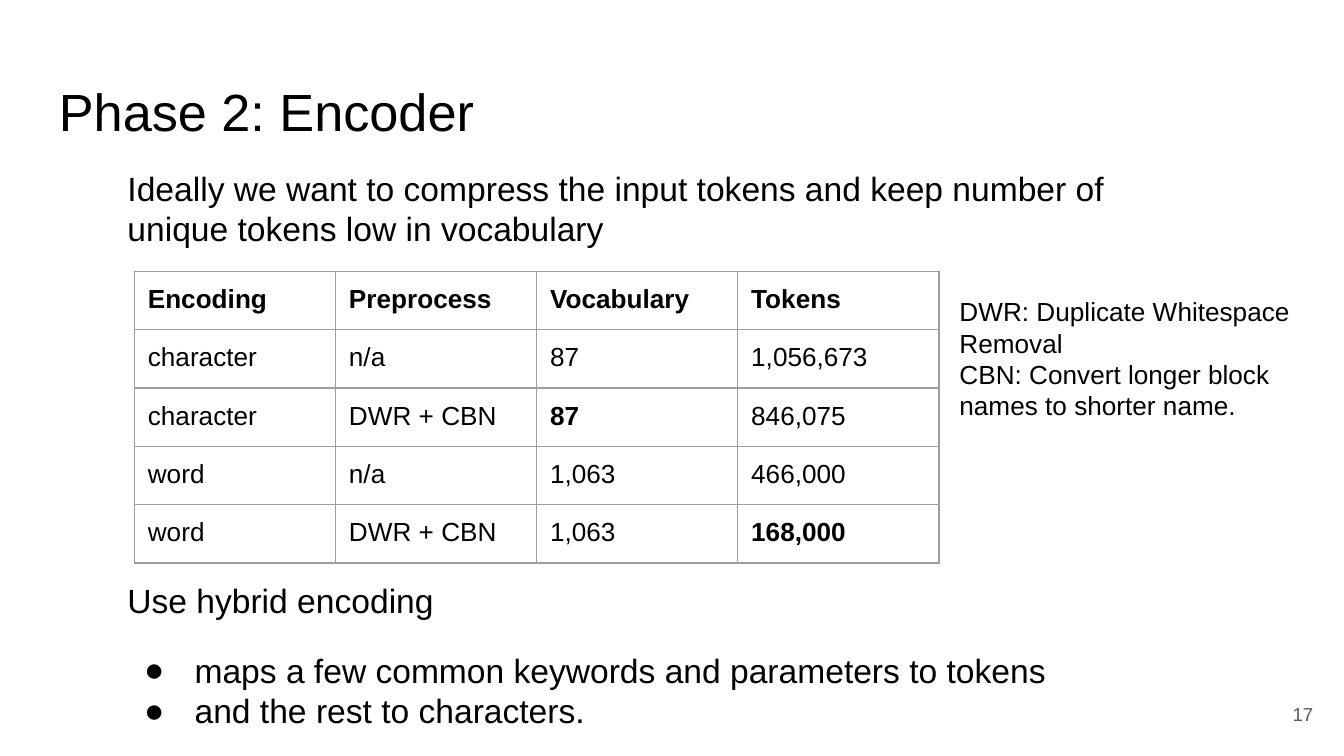
import pptx
import pptx.util
import pptx.dml.color
import pptx.enum.text
import pptx.oxml
import pptx.oxml.ns

Pt = pptx.util.Pt
RGBColor = pptx.dml.color.RGBColor
PP_ALIGN = pptx.enum.text.PP_ALIGN
MSO_ANCHOR = pptx.enum.text.MSO_ANCHOR

BLACK = RGBColor(0x00, 0x00, 0x00)
GRAY = RGBColor(0x59, 0x59, 0x59)
BORDER = RGBColor(0x9E, 0x9E, 0x9E)
FONT = "Arial"
INSET = 7.2

ROWS = [
    ["Encoding", "Preprocess", "Vocabulary", "Tokens"],
    ["character", "n/a", "87", "1,056,673"],
    ["character", "DWR + CBN", "87", "846,075"],
    ["word", "n/a", "1,063", "466,000"],
    ["word", "DWR + CBN", "1,063", "168,000"],
]
BEST_CELLS = {(2, 2), (4, 3)}


def add_run(p, text, size, color=BLACK, bold=False):
    r = p.add_run()
    r.text = text
    r.font.name = FONT
    r.font.size = Pt(size)
    r.font.bold = bold
    r.font.color.rgb = color


def set_margins(target):
    for side in ("left", "top", "right", "bottom"):
        setattr(target, f"margin_{side}", Pt(INSET))


def add_text(s, box, lines, size, color=BLACK, align=PP_ALIGN.LEFT, anchor=MSO_ANCHOR.TOP):
    tf = s.shapes.add_textbox(*map(Pt, box)).text_frame
    tf.word_wrap = True
    tf.vertical_anchor = anchor
    set_margins(tf)
    for i, line in enumerate(lines):
        p = tf.add_paragraph() if i else tf.paragraphs[0]
        p.alignment = align
        add_run(p, line, size, color)
    return tf


def set_bullet(p, indent, hanging):
    pPr = p._p.get_or_add_pPr()
    pPr.set("marL", str(Pt(indent)))
    pPr.set("indent", str(-Pt(hanging)))
    ns = pptx.oxml.ns.nsdecls("a")
    for xml in (
        f'<a:buClr {ns}><a:srgbClr val="{BLACK}"/></a:buClr>',
        f'<a:buFont {ns} typeface="{FONT}"/>',
        f'<a:buChar {ns} char="●"/>',
    ):
        pPr.append(pptx.oxml.parse_xml(xml))


def set_borders(cell):
    tcPr = cell._tc.get_or_add_tcPr()
    ns = pptx.oxml.ns.nsdecls("a")
    for i, side in enumerate(("lnL", "lnR", "lnT", "lnB")):
        tcPr.insert(i, pptx.oxml.parse_xml(
            f'<a:{side} {ns} w="{Pt(0.75)}"><a:solidFill>'
            f'<a:srgbClr val="{BORDER}"/></a:solidFill></a:{side}>'))


def add_encoding_table(s, box):
    left, top, width, height = box
    table = s.shapes.add_table(len(ROWS), len(ROWS[0]), *map(Pt, box)).table
    table.first_row = False
    table.horz_banding = False
    for column in table.columns:
        column.width = Pt(width / len(ROWS[0]))
    for i, row in enumerate(ROWS):
        table.rows[i].height = Pt(height / len(ROWS))
        for j, text in enumerate(row):
            cell = table.cell(i, j)
            cell.fill.background()
            set_margins(cell)
            set_borders(cell)
            bold = i == 0 or (i, j) in BEST_CELLS
            add_run(cell.text_frame.paragraphs[0], text, 14, bold=bold)


def add_conclusion(s, box):
    tf = add_text(s, box, [
        "Use hybrid encoding",
        "maps a few common keywords and parameters to tokens",
        "and the rest to characters.",
    ], 18)
    lead, *items = tf.paragraphs
    lead.line_spacing = 1.15
    items[0].space_before = Pt(16)
    for p in items:
        set_bullet(p, 36, 27)


def main():
    prs = pptx.Presentation()
    prs.slide_width, prs.slide_height = Pt(720), Pt(405)
    s = prs.slides.add_slide(prs.slide_layouts[6])
    add_text(s, (24.5, 35.3, 671, 45.4), ["Phase 2: Encoder"], 28)
    add_encoding_table(s, (72, 145.4, 431, 150.5))
    add_conclusion(s, (61.2, 300.2, 537, 92))
    add_text(s, (506.9, 151.2, 207.4, 78.5), [
        "DWR: Duplicate Whitespace Removal",
        "CBN: Convert longer block names to shorter name.",
    ], 14)
    add_text(s, (667.4, 367.2, 43.2, 31), ["17"], 10, GRAY, PP_ALIGN.RIGHT, MSO_ANCHOR.MIDDLE)
    add_text(s, (61.2, 82.8, 570.2, 26), [
        "Ideally we want to compress the input tokens and keep number of "
        "unique tokens low in vocabulary",
    ], 18)
    prs.save("out.pptx")


if __name__ == "__main__":
    main()
